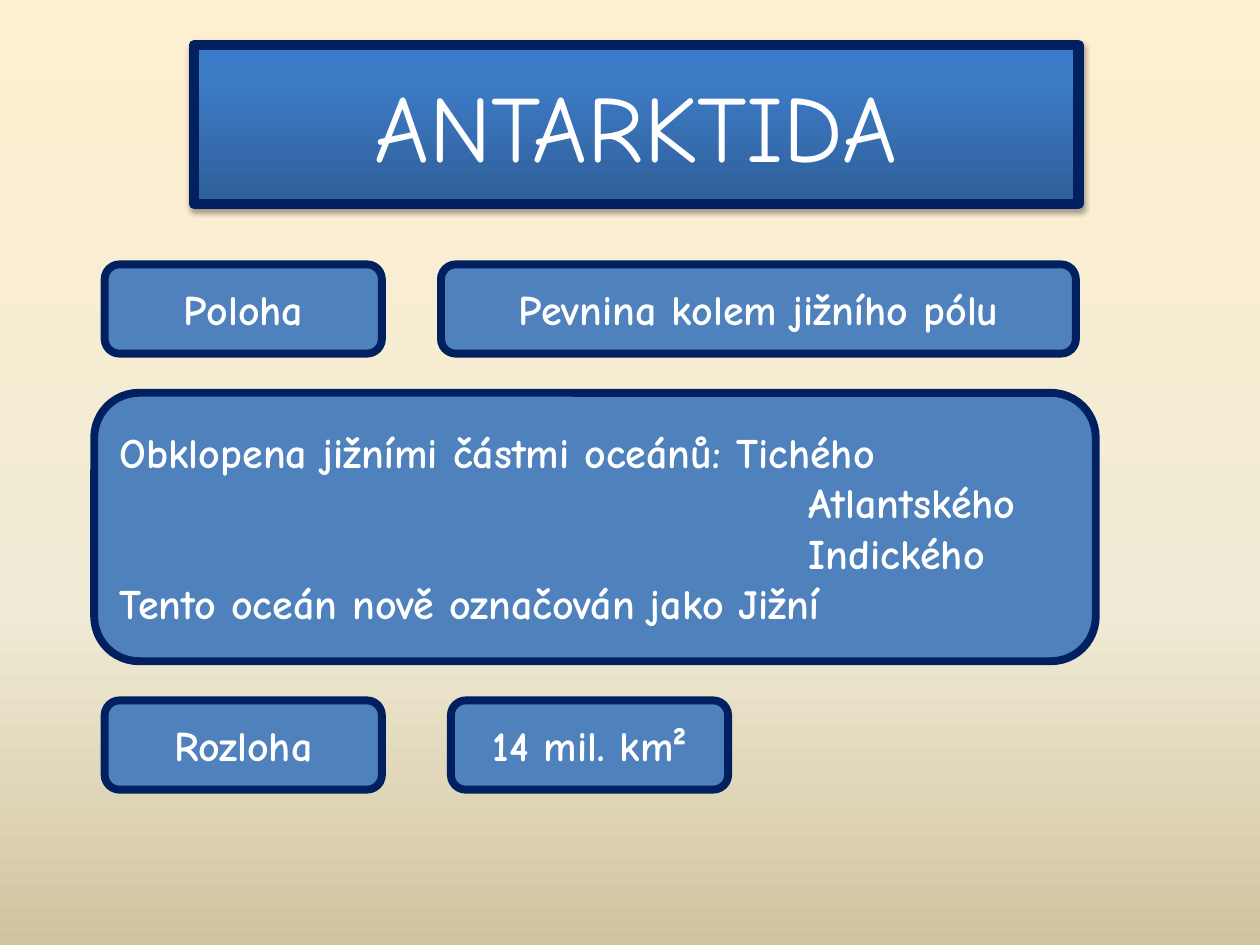
"""Build a slide of basic facts about Antarctica."""
import pptx
import pptx.dml.color
import pptx.enum.shapes
import pptx.enum.text
import pptx.oxml
import pptx.oxml.ns
import pptx.util
from lxml import etree

Cm, Pt = pptx.util.Cm, pptx.util.Pt
qn = pptx.oxml.ns.qn
ALIGN = pptx.enum.text.PP_ALIGN
NAMESPACE = pptx.oxml.ns.nsdecls("a")


def color(value):
    return pptx.dml.color.RGBColor.from_string(value)


def apply(target, values):
    for name, value in values.items():
        setattr(target, name, value)


class FactSlide:
    border = "002060"
    panel = "4F81BD"
    ink = "FFFFFF"
    body_font = {"name": "Comic Neue", "size": Pt(24), "bold": True}
    title_font = {"name": "Comic Neue", "size": Pt(54), "bold": False}
    frame = {
        "word_wrap": True,
        "auto_size": pptx.enum.text.MSO_AUTO_SIZE.NONE,
        "vertical_anchor": pptx.enum.text.MSO_ANCHOR.MIDDLE,
    }

    def __init__(self, deck):
        self.page = deck.slides.add_slide(deck.slide_layouts[5])

    def gradient(self, fill, element, stops, angle):
        fill.gradient()
        fill.gradient_angle = angle
        stop_list = next(element.iter(qn("a:gsLst")))
        for stop in list(stop_list):
            stop_list.remove(stop)
        for percent, value in stops:
            stop = etree.SubElement(stop_list, qn("a:gs"), pos=str(percent * 1000))
            etree.SubElement(stop, qn("a:srgbClr"), val=value)

    def background(self, stops):
        self.gradient(self.page.background.fill, self.page.element, stops, 270)

    def outline(self, box, width):
        box.line.color.rgb = color(self.border)
        box.line.width = Pt(width)

    def add_lines(self, box, lines, font, align):
        apply(box.text_frame, self.frame)
        for index, (text, indent) in enumerate(lines):
            para = box.text_frame.paragraphs[0] if index == 0 else box.text_frame.add_paragraph()
            para.alignment = align
            if indent:
                properties = para._p.get_or_add_pPr()
                properties.set("marL", str(Cm(indent)))
                properties.set("indent", "0")
            span = para.add_run()
            span.text = text
            apply(span.font, font)
            span.font.color.rgb = color(self.ink)

    def title(self, text, left, top, width, height, stops):
        box = self.page.shapes.title
        apply(box, {"left": Cm(left), "top": Cm(top), "width": Cm(width), "height": Cm(height)})
        properties = box.element.spPr
        properties.append(pptx.oxml.parse_xml(
            f'<a:prstGeom {NAMESPACE} prst="roundRect"><a:avLst/></a:prstGeom>'))
        self.gradient(box.fill, box.element, stops, 90)
        self.outline(box, 6)
        properties.append(pptx.oxml.parse_xml(
            f'<a:effectLst {NAMESPACE}><a:outerShdw blurRad="{Pt(3.1)}" dist="{Pt(1.8)}" '
            'dir="5400000" rotWithShape="0"><a:srgbClr val="000000"><a:alpha val="35000"/>'
            '</a:srgbClr></a:outerShdw></a:effectLst>'))
        self.add_lines(box, [(text, 0)], self.title_font, ALIGN.CENTER)

    def fact(self, lines, left, top, width=5.59, height=1.8, align=ALIGN.CENTER):
        box = self.page.shapes.add_shape(
            pptx.enum.shapes.MSO_SHAPE.ROUNDED_RECTANGLE,
            Cm(left), Cm(top), Cm(width), Cm(height))
        box.shadow.inherit = False
        box.fill.solid()
        box.fill.fore_color.rgb = color(self.panel)
        self.outline(box, 4.5)
        self.add_lines(box, lines, self.body_font, align)


def main():
    deck = pptx.Presentation()
    apply(deck, {"slide_width": Cm(25.4), "slide_height": Cm(19.05)})
    slide = FactSlide(deck)
    slide.background([(0, "FFEFD1"), (65, "F0EBD5"), (100, "D1C39F")])
    slide.title("ANTARKTIDA", 3.91, 0.91, 17.83, 3.2,
                [(0, "2F5F99"), (80, "3D7CC7"), (100, "3A7CCB")])
    label_left, location_top, area_top, ocean_indent = 2.11, 5.33, 14.12, 13.89
    slide.fact([("Poloha", 0)], label_left, location_top)
    slide.fact([("Pevnina kolem jižního pólu", 0)], 8.89, location_top, width=12.8)
    slide.fact([
        ("Obklopena jižními částmi oceánů: Tichého", 0),
        ("Atlantského", ocean_indent),
        ("Indického", ocean_indent),
        ("Tento oceán nově označován jako Jižní", 0),
    ], 1.9, 7.92, 20.19, 5.41, ALIGN.LEFT)
    slide.fact([("Rozloha", 0)], label_left, area_top)
    slide.fact([("14 mil. km²", 0)], 9.09, area_top)
    deck.save("out.pptx")


if __name__ == "__main__":
    main()
